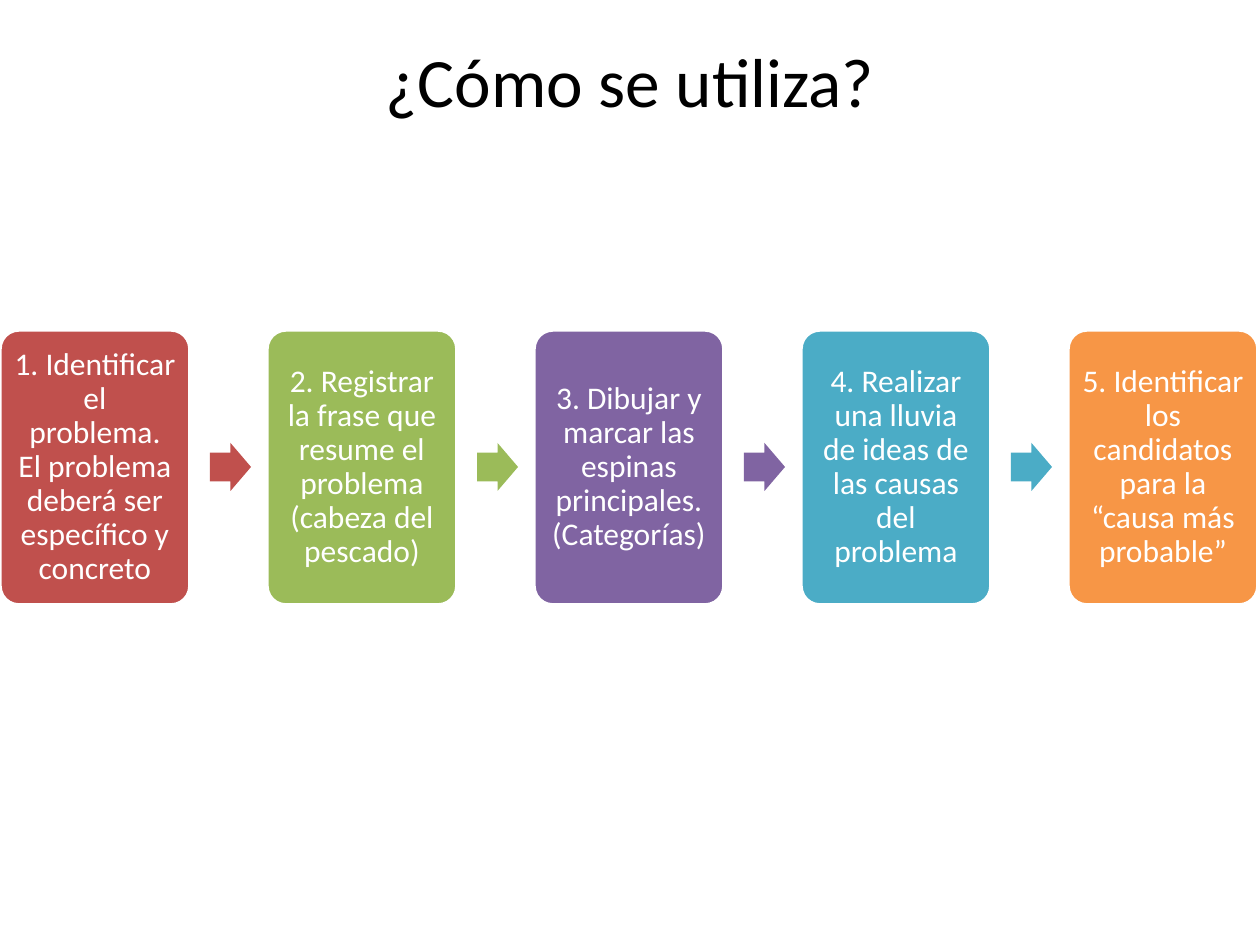
from dataclasses import dataclass

from pptx import Presentation
from pptx.dml.color import RGBColor
from pptx.enum.shapes import MSO_SHAPE
from pptx.enum.text import MSO_ANCHOR, PP_ALIGN
from pptx.util import Emu, Pt

ROUNDED = MSO_SHAPE.ROUNDED_RECTANGLE
ARROW = MSO_SHAPE.RIGHT_ARROW
TOP, MIDDLE = MSO_ANCHOR.TOP, MSO_ANCHOR.MIDDLE
CENTER = PP_ALIGN.CENTER

BLACK = RGBColor(0x00, 0x00, 0x00)
WHITE = RGBColor(0xFF, 0xFF, 0xFF)
RED = RGBColor(0xC0, 0x50, 0x4D)
GREEN = RGBColor(0x9B, 0xBB, 0x59)
PURPLE = RGBColor(0x80, 0x64, 0xA2)
TEAL = RGBColor(0x4B, 0xAC, 0xC6)
ORANGE = RGBColor(0xF7, 0x96, 0x46)

FONT = "Calibri"
PX_PER_INCH = 126
STEP_PITCH, STEP_TOP, STEP_WIDTH, STEP_HEIGHT = 267, 330, 190, 275
ARROW_OFFSET, ARROW_WIDTH, ARROW_HEIGHT = 210, 41, 48
STEP_INSET = 9


@dataclass(frozen=True)
class Step:
    text: str
    color: RGBColor


STEPS = [
    Step("1. Identificar el problema. El problema deberá ser específico y concreto", RED),
    Step("2. Registrar la frase que resume el problema (cabeza del pescado)", GREEN),
    Step("3. Dibujar y marcar las espinas principales. (Categorías)", PURPLE),
    Step("4. Realizar una lluvia de ideas de las causas del problema", TEAL),
    Step("5. Identificar los candidatos para la “causa más probable”", ORANGE),
]


def px(length: int) -> Emu:
    return Emu(round(length * 914400 / PX_PER_INCH))


def write(box, text: str, size: float, color: RGBColor, anchor, side: int, vertical: int):
    frame = box.text_frame
    frame.word_wrap = True
    frame.vertical_anchor = anchor
    frame.margin_left = frame.margin_right = px(side)
    frame.margin_top = frame.margin_bottom = px(vertical)
    para = frame.paragraphs[0]
    para.alignment = CENTER
    span = para.add_run()
    span.text = text
    span.font.name = FONT
    span.font.size = Pt(size)
    span.font.color.rgb = color
    return para


def add_block(page, preset, left: int, top: int, width: int, height: int, color: RGBColor):
    block = page.shapes.add_shape(preset, px(left), px(top), px(width), px(height))
    block.shadow.inherit = False
    block.fill.solid()
    block.fill.fore_color.rgb = color
    return block


def draw_step(page, step: Step, left: int) -> None:
    card = add_block(page, ROUNDED, left, STEP_TOP, STEP_WIDTH, STEP_HEIGHT, step.color)
    card.adjustments[0] = 0.1
    card.line.color.rgb = WHITE
    card.line.width = Pt(2)
    para = write(card, step.text, 18, WHITE, MIDDLE, STEP_INSET, STEP_INSET)
    para.line_spacing = 0.9


def draw_arrow(page, color: RGBColor, left: int) -> None:
    top = STEP_TOP + (STEP_HEIGHT - ARROW_HEIGHT) // 2
    arrow = add_block(page, ARROW, left, top, ARROW_WIDTH, ARROW_HEIGHT, color)
    arrow.adjustments[0] = 0.6
    arrow.adjustments[1] = 0.5
    arrow.line.fill.background()


def main() -> None:
    deck = Presentation()
    deck.slide_width, deck.slide_height = px(1260), px(945)
    page = deck.slides.add_slide(deck.slide_layouts[6])

    title = page.shapes.add_textbox(px(63), px(38), px(1134), px(157))
    write(title, "¿Cómo se utiliza?", 39.6, BLACK, TOP, 13, 0)

    for index, step in enumerate(STEPS):
        left = index * STEP_PITCH
        draw_step(page, step, left)
        if index < len(STEPS) - 1:
            draw_arrow(page, step.color, left + ARROW_OFFSET)

    deck.save("out.pptx")


if __name__ == "__main__":
    main()
